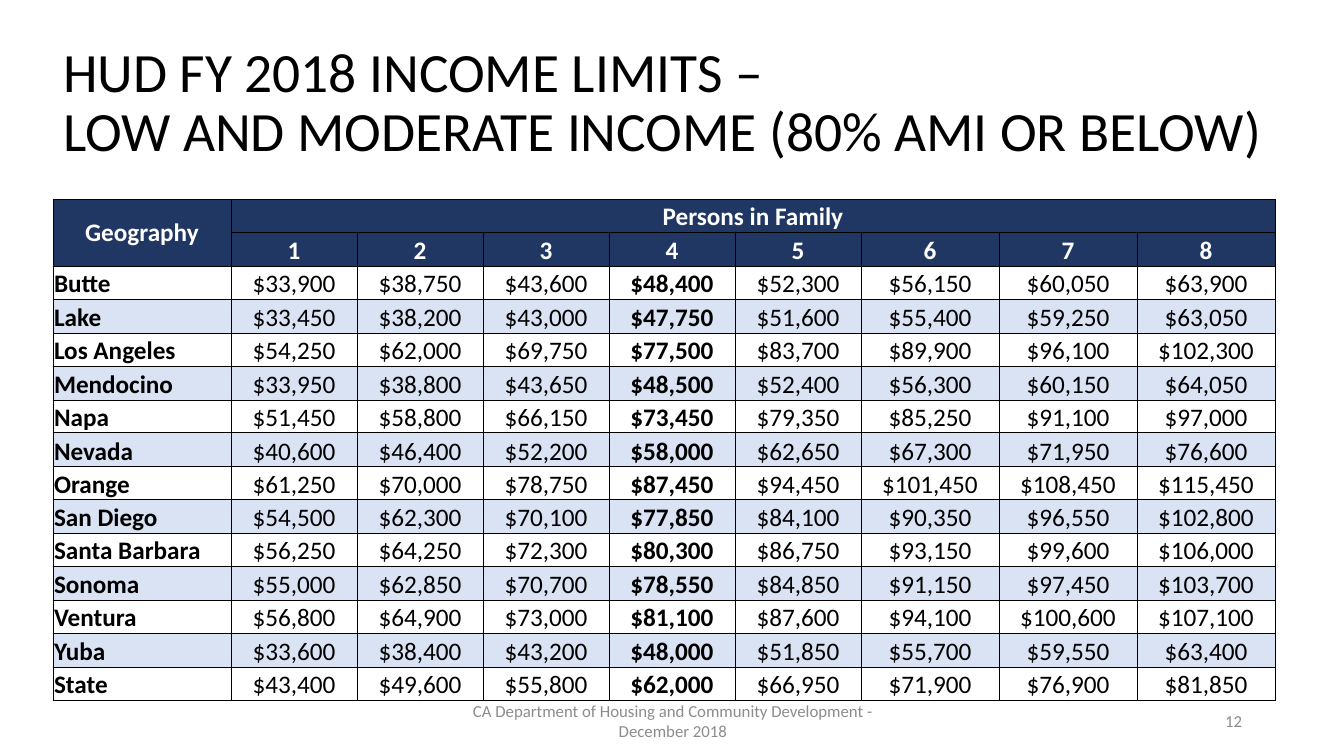
from lxml import etree
from pptx import Presentation
from pptx.dml.color import RGBColor
from pptx.enum.text import MSO_ANCHOR, MSO_AUTO_SIZE, PP_ALIGN
from pptx.oxml.ns import qn
from pptx.util import Pt

EMU_PER_PX = 12192000 / 1344
LEFT, CENTER, RIGHT = PP_ALIGN.LEFT, PP_ALIGN.CENTER, PP_ALIGN.RIGHT
MIDDLE, BOTTOM = MSO_ANCHOR.MIDDLE, MSO_ANCHOR.BOTTOM
NO_AUTOFIT = MSO_AUTO_SIZE.NONE

FONT = "Calibri"
BLACK, WHITE, GRAY = "000000", "FFFFFF", "8C8C8C"
NAVY, PALE_BLUE = "203764", "DAE3F3"

HEADER_ROWS = 2
FAMILY_OF_FOUR = 4
COLUMN_WIDTHS = [178] + [126] * 5 + [138] * 3
TABLE_HEIGHT = 502

INCOME_LIMITS = [
    ("Butte", 33900, 38750, 43600, 48400, 52300, 56150, 60050, 63900),
    ("Lake", 33450, 38200, 43000, 47750, 51600, 55400, 59250, 63050),
    ("Los Angeles", 54250, 62000, 69750, 77500, 83700, 89900, 96100, 102300),
    ("Mendocino", 33950, 38800, 43650, 48500, 52400, 56300, 60150, 64050),
    ("Napa", 51450, 58800, 66150, 73450, 79350, 85250, 91100, 97000),
    ("Nevada", 40600, 46400, 52200, 58000, 62650, 67300, 71950, 76600),
    ("Orange", 61250, 70000, 78750, 87450, 94450, 101450, 108450, 115450),
    ("San Diego", 54500, 62300, 70100, 77850, 84100, 90350, 96550, 102800),
    ("Santa Barbara", 56250, 64250, 72300, 80300, 86750, 93150, 99600, 106000),
    ("Sonoma", 55000, 62850, 70700, 78550, 84850, 91150, 97450, 103700),
    ("Ventura", 56800, 64900, 73000, 81100, 87600, 94100, 100600, 107100),
    ("Yuba", 33600, 38400, 43200, 48000, 51850, 55700, 59550, 63400),
    ("State", 43400, 49600, 55800, 62000, 66950, 71900, 76900, 81850),
]


def px(length):
    return round(length * EMU_PER_PX)


def color(hex_string):
    return RGBColor.from_string(hex_string)


class SlideBuilder:
    def __init__(self, slide, font):
        self.slide = slide
        self.font = font

    def format_text(self, frame, size, text_color, align, bold=False):
        for paragraph in frame.paragraphs:
            paragraph.alignment = align
            for run in paragraph.runs:
                run.font.name = self.font
                run.font.size = Pt(size)
                run.font.bold = bold
                run.font.color.rgb = color(text_color)

    def title(self, text, left, top, width, height):
        title = self.slide.shapes.title
        title.left, title.top = px(left), px(top)
        title.width, title.height = px(width), px(height)
        frame = title.text_frame
        frame.text = text
        frame.word_wrap = True
        frame.auto_size = NO_AUTOFIT
        frame.vertical_anchor = MIDDLE
        frame.paragraphs[0].line_spacing = 0.9
        self.format_text(frame, 39.6, BLACK, LEFT)

    def footer(self, text, left, top, width, height, align):
        box = self.slide.shapes.add_textbox(px(left), px(top), px(width), px(height))
        frame = box.text_frame
        frame.text = text
        frame.word_wrap = True
        frame.vertical_anchor = MIDDLE
        self.format_text(frame, 12, GRAY, align)

    def table(self, left, top, column_widths, height, row_count):
        grid = self.slide.shapes.add_table(
            row_count, len(column_widths), px(left), px(top),
            px(sum(column_widths)), px(height)).table
        grid.first_row = grid.horz_banding = False
        for column, width in zip(grid.columns, column_widths):
            column.width = px(width)
        edges = [round(height * i / row_count) for i in range(row_count + 1)]
        for row, upper, lower in zip(grid.rows, edges, edges[1:]):
            row.height = px(lower - upper)
        return grid

    def cell(self, cell, text, fill, text_color, align, bold):
        cell.text_frame.text = text
        cell.margin_left = cell.margin_top = cell.margin_right = px(1)
        cell.margin_bottom = 0
        cell.vertical_anchor = BOTTOM
        if fill:
            cell.fill.solid()
            cell.fill.fore_color.rgb = color(fill)
        else:
            cell.fill.background()
        self.format_text(cell.text_frame, 18, text_color, align, bold)
        self.cell_borders(cell)

    def cell_borders(self, cell):
        properties = cell._tc.get_or_add_tcPr()
        for position, side in enumerate(("a:lnL", "a:lnR", "a:lnT", "a:lnB")):
            line = etree.Element(qn(side), w=str(Pt(0.5)))
            line_fill = etree.SubElement(line, qn("a:solidFill"))
            etree.SubElement(line_fill, qn("a:srgbClr"), val=BLACK)
            properties.insert(position, line)


def add_income_table(builder):
    family_sizes = [str(size) for size in range(1, 9)]
    headers = [["Geography", "Persons in Family"] + [""] * 7, [""] + family_sizes]
    grid = builder.table(53, 199, COLUMN_WIDTHS, TABLE_HEIGHT,
                         HEADER_ROWS + len(INCOME_LIMITS))
    for r, labels in enumerate(headers):
        for c, label in enumerate(labels):
            builder.cell(grid.cell(r, c), label, NAVY, WHITE, CENTER, True)
    for r, (county, *limits) in enumerate(INCOME_LIMITS):
        fill = PALE_BLUE if r % 2 else None
        texts = [county] + [f"${limit:,}" for limit in limits]
        for c, text in enumerate(texts):
            builder.cell(grid.cell(r + HEADER_ROWS, c), text, fill, BLACK,
                         CENTER if c else LEFT, c in (0, FAMILY_OF_FOUR))
    geography = grid.cell(0, 0)
    geography.merge(grid.cell(1, 0))
    geography.vertical_anchor = MIDDLE
    grid.cell(0, 1).merge(grid.cell(0, 8))


def main():
    presentation = Presentation()
    presentation.slide_width, presentation.slide_height = px(1344), px(756)
    title_only = presentation.slide_layouts[5]
    builder = SlideBuilder(presentation.slides.add_slide(title_only), FONT)
    builder.title("HUD FY 2018 INCOME LIMITS – \v"
                  "LOW AND MODERATE INCOME (80% AMI OR BELOW)", 53, 31, 1238, 146)
    add_income_table(builder)
    builder.footer("CA Department of Housing and Community Development - December 2018",
                   446, 701, 454, 40, CENTER)
    builder.footer("12", 950, 701, 302, 40, RIGHT)
    presentation.save("out.pptx")


if __name__ == "__main__":
    main()
